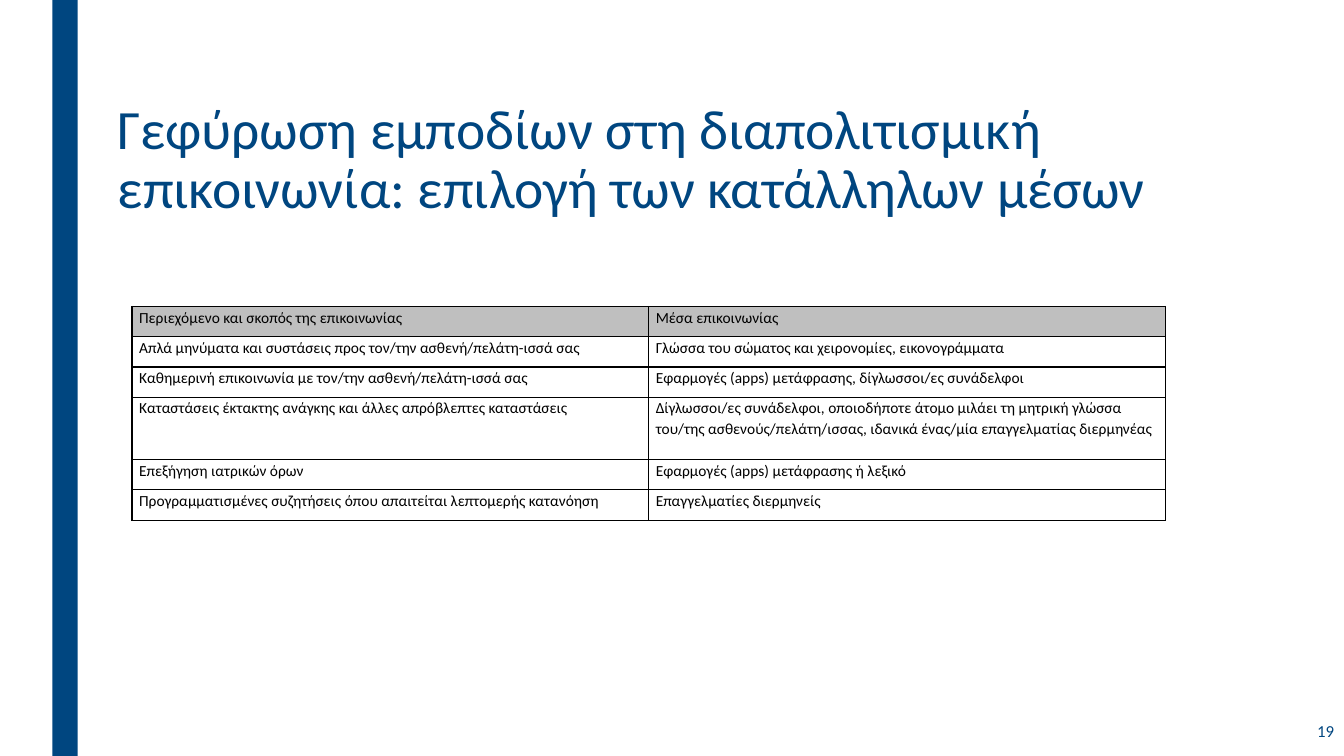
"""Build a slide that matches communication purposes with suitable means."""
from lxml.etree import SubElement
from pptx import Presentation
from pptx.dml.color import RGBColor
from pptx.enum.shapes import MSO_SHAPE
from pptx.enum.text import MSO_ANCHOR as Anchor, PP_ALIGN as Align
from pptx.oxml.ns import qn
from pptx.util import Inches, Pt

COLORS = {"navy": "004680", "header": "BFBFBF", "ink": "000000", "paper": "FFFFFF"}
WIDTH, HEIGHT = 13.33, 7.5
TABLE_LEFT, TABLE_TOP = 1.31, 3.04
COLUMN, ROW, TALL_ROW = 5.125, 0.3, 0.62
TALL_INDEX = 3
CELL_FORMAT = {"margin_left": Inches(0.07), "margin_right": Inches(0.07),
               "margin_top": 0, "margin_bottom": 0}
MEANS = [
    ("Περιεχόμενο και σκοπός της επικοινωνίας", "Μέσα επικοινωνίας"),
    ("Απλά μηνύματα και συστάσεις προς τον/την ασθενή/πελάτη-ισσά σας",
     "Γλώσσα του σώματος και χειρονομίες, εικονογράμματα"),
    ("Καθημερινή επικοινωνία με τον/την ασθενή/πελάτη-ισσά σας",
     "Εφαρμογές (apps) μετάφρασης, δίγλωσσοι/ες συνάδελφοι"),
    ("Καταστάσεις έκτακτης ανάγκης και άλλες απρόβλεπτες καταστάσεις",
     "Δίγλωσσοι/ες συνάδελφοι, οποιοδήποτε άτομο μιλάει τη μητρική γλώσσα "
     "του/της ασθενούς/πελάτη/ισσας, ιδανικά ένας/μία επαγγελματίας διερμηνέας"),
    ("Επεξήγηση ιατρικών όρων", "Εφαρμογές (apps) μετάφρασης ή λεξικό"),
    ("Προγραμματισμένες συζητήσεις όπου απαιτείται λεπτομερής κατανόηση",
     "Επαγγελματίες διερμηνείς"),
]


def write(frame, text, size, color, **layout):
    paragraph = frame.paragraphs[0]
    for key, value in layout.items():
        setattr(paragraph, key, value)
    run = paragraph.add_run()
    run.text = text
    for key, value in {"name": "Calibri", "size": Pt(size)}.items():
        setattr(run.font, key, value)
    run.font.color.rgb = RGBColor.from_string(COLORS[color])


def draw_borders(cell):
    properties = cell._tc.get_or_add_tcPr()
    for side in ("lnL", "lnR", "lnT", "lnB"):
        border = SubElement(properties, qn(f"a:{side}"), w=str(Pt(1)))
        fill = SubElement(border, qn("a:solidFill"))
        SubElement(fill, qn("a:srgbClr"), val=COLORS["ink"])


deck = Presentation()
deck.slide_width, deck.slide_height = Inches(WIDTH), Inches(HEIGHT)
slide = deck.slides.add_slide(deck.slide_layouts[6])
slide.background.fill.solid()
slide.background.fill.fore_color.rgb = RGBColor.from_string(COLORS["paper"])

stripe = slide.shapes.add_shape(
    MSO_SHAPE.RECTANGLE, Inches(0.52), 0, Inches(0.25), deck.slide_height)
stripe.shadow.inherit = False
stripe.fill.solid()
stripe.fill.fore_color.rgb = RGBColor.from_string(COLORS["navy"])
stripe.line.fill.background()

captions = [
    ("Γεφύρωση εμποδίων στη διαπολιτισμική επικοινωνία: επιλογή των κατάλληλων μέσων",
     (1.07, 0.96, 11.47, 1.9), 39.6, Anchor.TOP,
     {"alignment": Align.LEFT, "line_spacing": 0.89}),
    ("19", (11.58, 7.03, 1.75, 0.44), 12, Anchor.MIDDLE, {"alignment": Align.RIGHT}),
]
for text, place, size, anchor, layout in captions:
    frame = slide.shapes.add_textbox(*map(Inches, place)).text_frame
    frame.word_wrap = True
    frame.vertical_anchor = anchor
    write(frame, text, size, "navy", **layout)

heights = [TALL_ROW if index == TALL_INDEX else ROW for index in range(len(MEANS))]
means_table = slide.shapes.add_table(
    len(MEANS), 2, Inches(TABLE_LEFT), Inches(TABLE_TOP),
    Inches(2 * COLUMN), Inches(sum(heights))).table
means_table.first_row = means_table.horz_banding = False
for column in means_table.columns:
    column.width = Inches(COLUMN)
for row_index, (height, entries) in enumerate(zip(heights, MEANS)):
    means_table.rows[row_index].height = Inches(height)
    for column_index, entry in enumerate(entries):
        cell = means_table.cell(row_index, column_index)
        for key, value in CELL_FORMAT.items():
            setattr(cell, key, value)
        write(cell.text_frame, entry, 11, "ink", line_spacing=Pt(15))
        draw_borders(cell)
        if row_index == 0:
            cell.fill.solid()
            cell.fill.fore_color.rgb = RGBColor.from_string(COLORS["header"])
        else:
            cell.fill.background()

deck.save("out.pptx")
